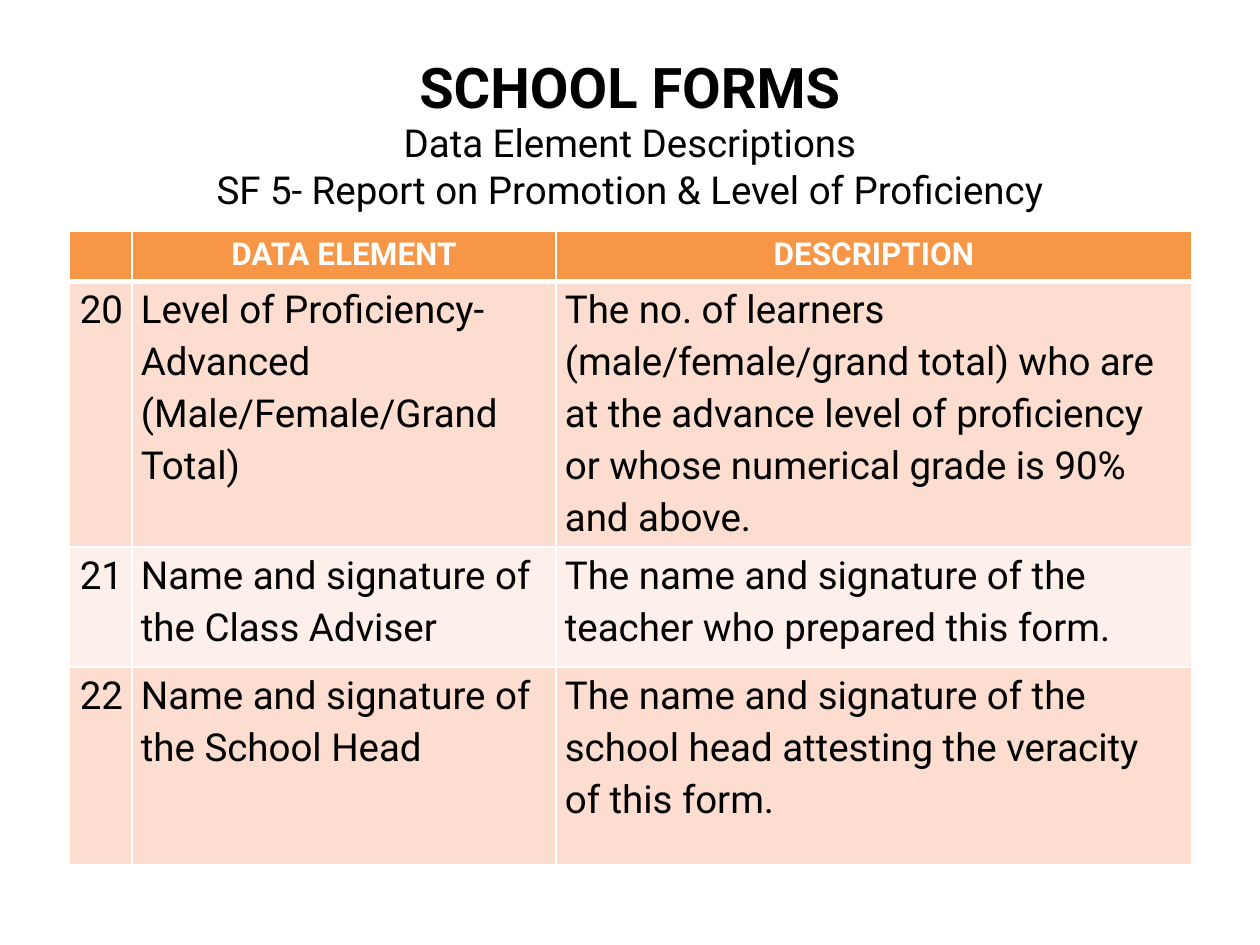
from lxml.etree import SubElement
from pptx import Presentation
from pptx.dml.color import RGBColor
from pptx.enum.text import MSO_ANCHOR as Anchor, PP_ALIGN as Align
from pptx.oxml.ns import qn
from pptx.util import Emu, Pt

PX = 914400 // 126
FONT = "Roboto"
BLACK = RGBColor(0x00, 0x00, 0x00)
WHITE = RGBColor(0xFF, 0xFF, 0xFF)
ORANGE = RGBColor(0xF7, 0x96, 0x46)
PEACH = RGBColor(0xFC, 0xDD, 0xCF)
PALE_PEACH = RGBColor(0xFD, 0xEF, 0xE9)

HEADING = "SCHOOL FORMS"
SUBHEADINGS = [
    "Data Element Descriptions",
    "SF 5- Report on Promotion & Level of Proficiency",
]
COLUMN_WIDTHS = [63, 424, 636]
ROW_HEIGHTS = [49, 260, 120, 198]
ROWS = [
    ["", "DATA ELEMENT", "DESCRIPTION"],
    ["20", "Level of Proficiency- Advanced (Male/Female/Grand Total)",
     "The no. of learners (male/female/grand total) who are at the advance "
     "level of proficiency or whose numerical grade is 90% and above."],
    ["21", "Name and signature of the Class Adviser",
     "The name and signature of the teacher who prepared this form."],
    ["22", "Name and signature of the School Head",
     "The name and signature of the school head attesting the veracity of "
     "this form."],
]


def px(length):
    return Emu(length * PX)


def write(para, text, size=22, color=BLACK, bold=False, align=Align.LEFT,
          spacing=1.0):
    para.alignment = align
    para.line_spacing = spacing
    span = para.add_run()
    span.text = text
    span.font.name = FONT
    span.font.size = Pt(size)
    span.font.bold = bold
    span.font.color.rgb = color


def add_title(page, left, top, width, height):
    box = page.shapes.add_textbox(px(left), px(top), px(width), px(height))
    frame = box.text_frame
    frame.word_wrap = True
    frame.vertical_anchor = Anchor.MIDDLE
    write(frame.paragraphs[0], HEADING, size=32, bold=True, align=Align.CENTER)
    for line in SUBHEADINGS:
        write(frame.add_paragraph(), line, align=Align.CENTER)


def set_borders(cell, **widths):
    """Draw white borders, given in points for each side L, R, T and B."""
    properties = cell._tc.get_or_add_tcPr()
    for side, width in widths.items():
        line = SubElement(properties, qn(f"a:ln{side}"), w=str(Pt(width)))
        fill = SubElement(line, qn("a:solidFill"))
        SubElement(fill, qn("a:srgbClr"), val=str(WHITE))


def fill_cell(cell, text, row, column):
    is_header = row == 0
    set_borders(cell, L=1, R=1, T=3 if row == 1 else 1, B=3 if is_header else 1)
    cell.fill.solid()
    if is_header:
        cell.fill.fore_color.rgb = ORANGE
    else:
        cell.fill.fore_color.rgb = PEACH if row % 2 else PALE_PEACH
    if not text:
        return
    cell.margin_left = cell.margin_right = px(9)
    cell.margin_top = cell.margin_bottom = 0
    para = cell.text_frame.paragraphs[0]
    if is_header:
        write(para, text, size=18, color=WHITE, bold=True,
              align=Align.CENTER, spacing=1.15)
    else:
        write(para, text, align=Align.LEFT if column else Align.RIGHT,
              spacing=1.15)


def add_elements_table(page, left, top):
    table = page.shapes.add_table(
        len(ROWS), len(COLUMN_WIDTHS), px(left), px(top),
        px(sum(COLUMN_WIDTHS)), px(sum(ROW_HEIGHTS))).table
    for column, width in zip(table.columns, COLUMN_WIDTHS):
        column.width = px(width)
    for row, height in zip(table.rows, ROW_HEIGHTS):
        row.height = px(height)
    for row, texts in enumerate(ROWS):
        for column, text in enumerate(texts):
            fill_cell(table.cell(row, column), text, row, column)


def main():
    deck = Presentation()
    deck.slide_width, deck.slide_height = px(1260), px(945)
    page = deck.slides.add_slide(deck.slide_layouts[6])
    add_title(page, 63, 53, 1134, 158)
    add_elements_table(page, 69, 231)
    deck.save("out.pptx")


if __name__ == "__main__":
    main()
